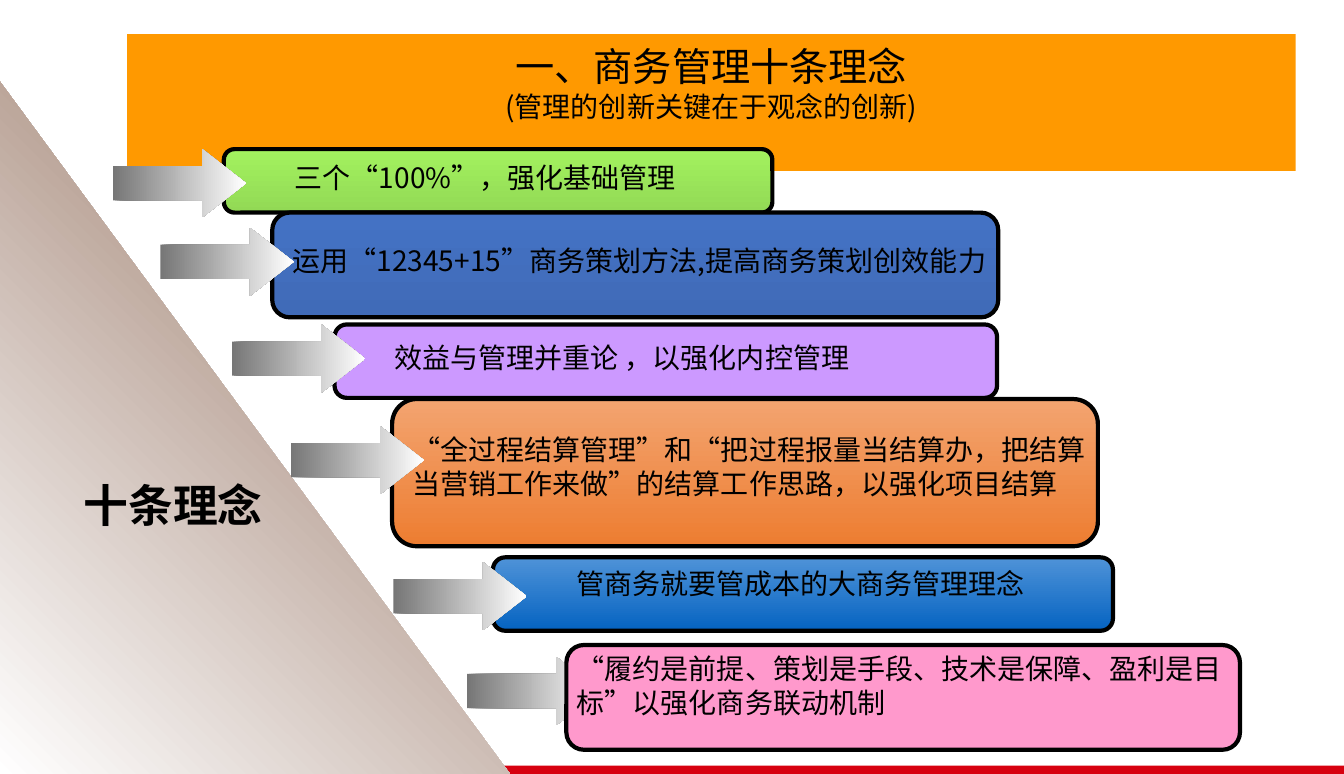
from dataclasses import dataclass

from lxml import etree
from pptx import Presentation
from pptx.dml.color import RGBColor
from pptx.enum.shapes import MSO_SHAPE
from pptx.enum.text import MSO_ANCHOR, PP_ALIGN
from pptx.oxml.ns import qn
from pptx.util import Cm, Pt

RECTANGLE = MSO_SHAPE.RECTANGLE
ROUNDED = MSO_SHAPE.ROUNDED_RECTANGLE
ARROW = MSO_SHAPE.RIGHT_ARROW
TRIANGLE = MSO_SHAPE.RIGHT_TRIANGLE
TOP = MSO_ANCHOR.TOP
LEFT = PP_ALIGN.LEFT
CENTER = PP_ALIGN.CENTER

BLACK = RGBColor(0x00, 0x00, 0x00)
WHITE = RGBColor(0xFF, 0xFF, 0xFF)
BAND_ORANGE = RGBColor(0xFF, 0x99, 0x00)
FOOTER_RED = RGBColor(0xD7, 0x00, 0x0F)
ARROW_GREY = RGBColor(0x76, 0x76, 0x76)
BROWN = RGBColor(0x8A, 0x64, 0x50)
LIME = RGBColor(0xA3, 0xF2, 0x5F)
GREEN = RGBColor(0x92, 0xD9, 0x55)
BLUE = RGBColor(0x44, 0x72, 0xC4)
DEEP_BLUE = RGBColor(0x40, 0x6B, 0xB8)
PURPLE = RGBColor(0xCC, 0x99, 0xFF)
PEACH = RGBColor(0xF3, 0xA4, 0x70)
ORANGE = RGBColor(0xED, 0x7D, 0x31)
SKY = RGBColor(0x4F, 0x93, 0xD8)
OCEAN = RGBColor(0x05, 0x63, 0xC1)
PINK = RGBColor(0xFF, 0x99, 0xCC)

FONT = "Noto Sans CJK SC"
LINE_HEIGHT = 1.2
CORNER = 0.167
# Share of the corner radius by which a rounded box shrinks its text area
CORNER_INSET = 0.29
ARROW_SIZE = (3.36, 1.72)


@dataclass(frozen=True)
class Area:
    """A rectangle in centimetres."""
    left: float
    top: float
    width: float
    height: float


@dataclass(frozen=True)
class Idea:
    text: str
    box: Area
    colors: tuple[RGBColor, ...]
    arrow: tuple[float, float]
    text_left: float
    text_top: float
    text_right: float
    align: PP_ALIGN = LEFT
    arrow_behind: bool = False


IDEAS = [
    Idea("三个“100%”，强化基础管理", Area(5.64, 3.76, 13.82, 1.6),
         (LIME, GREEN), (2.84, 3.76), 5.72, 4.04, 18.74, CENTER),
    Idea("运用“12345+15”商务策划方法,提高商务策划创效能力", Area(6.86, 5.36, 18.29, 2.64),
         (BLUE, DEEP_BLUE), (4.04, 5.74), 7.37, 6.15, 24.87),
    Idea("效益与管理并重论 ，以强化内控管理", Area(8.43, 8.18, 16.69, 1.85),
         (PURPLE,), (5.84, 8.18), 9.93, 8.59, 24.5),
    Idea("“全过程结算管理”和“把过程报量当结算办，把结算当营销工作来做”的结算工作思路，以强化项目结算",
         Area(9.88, 10.06, 17.78, 3.71),
         (PEACH, ORANGE), (7.32, 10.74), 10.39, 10.9, 27.41),
    Idea("管商务就要管成本的大商务管理理念", Area(12.42, 14.05, 15.62, 1.85),
         (SKY, OCEAN), (9.91, 14.17), 12.6, 14.27, 27.74, CENTER),
    Idea("“履约是前提、策划是手段、技术是保障、盈利是目标”以强化商务联动机制",
         Area(14.27, 16.26, 16.97, 2.64),
         (PINK,), (11.76, 16.56), 14.53, 16.43, 30.99, arrow_behind=True),
]


def paint(shape, colors: tuple[RGBColor, ...], angle: float = 270) -> None:
    """Fill with one colour, or with a gradient between two."""
    if len(colors) == 1:
        shape.fill.solid()
        shape.fill.fore_color.rgb = colors[0]
        return
    shape.fill.gradient()
    shape.fill.gradient_angle = angle
    for stop, color in zip(shape.fill.gradient_stops, colors):
        stop.color.rgb = color


def add_shape(slide, kind: MSO_SHAPE, area: Area, colors: tuple[RGBColor, ...],
              angle: float = 270):
    shape = slide.shapes.add_shape(kind, Cm(area.left), Cm(area.top),
                                   Cm(area.width), Cm(area.height))
    shape.shadow.inherit = False
    shape.line.fill.background()
    paint(shape, colors, angle)
    return shape


def format_paragraph(paragraph, size: float, align: PP_ALIGN, bold: bool = False) -> None:
    paragraph.alignment = align
    paragraph.line_spacing = Pt(size * LINE_HEIGHT)
    paragraph.space_before = Pt(0)
    for run in paragraph.runs:
        run.font.name = FONT
        run.font.size = Pt(size)
        run.font.bold = bold
        run.font.color.rgb = BLACK
        east_asian = etree.SubElement(run.font._element, qn("a:ea"))
        east_asian.set("typeface", FONT)


def add_title(slide) -> None:
    title = slide.shapes.title
    title.left, title.top, title.width, title.height = Cm(3.2), Cm(0.86), Cm(29.44), Cm(3.45)
    paint(title, (BAND_ORANGE,))
    frame = title.text_frame
    frame.vertical_anchor = TOP
    frame.margin_top = Cm(0.2)
    frame.text = "一、商务管理十条理念\n(管理的创新关键在于观念的创新)"
    for paragraph, size in zip(frame.paragraphs, (28, 20)):
        format_paragraph(paragraph, size, CENTER)


def add_box(slide, idea: Idea) -> None:
    area = idea.box
    box = add_shape(slide, ROUNDED, area, idea.colors)
    box.adjustments[0] = CORNER
    box.line.color.rgb = BLACK
    box.line.width = Pt(3)
    inset = CORNER * CORNER_INSET * area.height
    frame = box.text_frame
    frame.word_wrap = True
    frame.vertical_anchor = TOP
    frame.margin_left = Cm(idea.text_left - area.left - inset)
    frame.margin_right = Cm(area.left + area.width - idea.text_right - inset)
    frame.margin_top = Cm(idea.text_top - area.top - inset)
    frame.margin_bottom = Cm(0)
    frame.text = idea.text
    format_paragraph(frame.paragraphs[0], 20, idea.align)


def add_arrow(slide, idea: Idea) -> None:
    arrow = add_shape(slide, ARROW, Area(*idea.arrow, *ARROW_SIZE), (ARROW_GREY, WHITE), 0)
    arrow.adjustments[1] = 0.64


def add_caption(slide) -> None:
    caption = slide.shapes.add_textbox(Cm(1.42), Cm(11.91), Cm(5.89), Cm(1.63))
    caption.text_frame.word_wrap = True
    caption.text_frame.text = "十条理念"
    format_paragraph(caption.text_frame.paragraphs[0], 32, CENTER, bold=True)


def main() -> None:
    deck = Presentation()
    deck.slide_width, deck.slide_height = Cm(33.86), Cm(19.51)
    slide = deck.slides.add_slide(deck.slide_layouts[5])
    add_shape(slide, RECTANGLE, Area(0, 19.3, 33.86, 0.21), (FOOTER_RED,))
    add_title(slide)
    add_shape(slide, TRIANGLE, Area(0, 2.06, 12.85, 17.45), (WHITE, BROWN), 45)
    for idea in IDEAS:
        steps = (add_arrow, add_box) if idea.arrow_behind else (add_box, add_arrow)
        for step in steps:
            step(slide, idea)
    add_caption(slide)
    deck.save("out.pptx")


if __name__ == "__main__":
    main()
